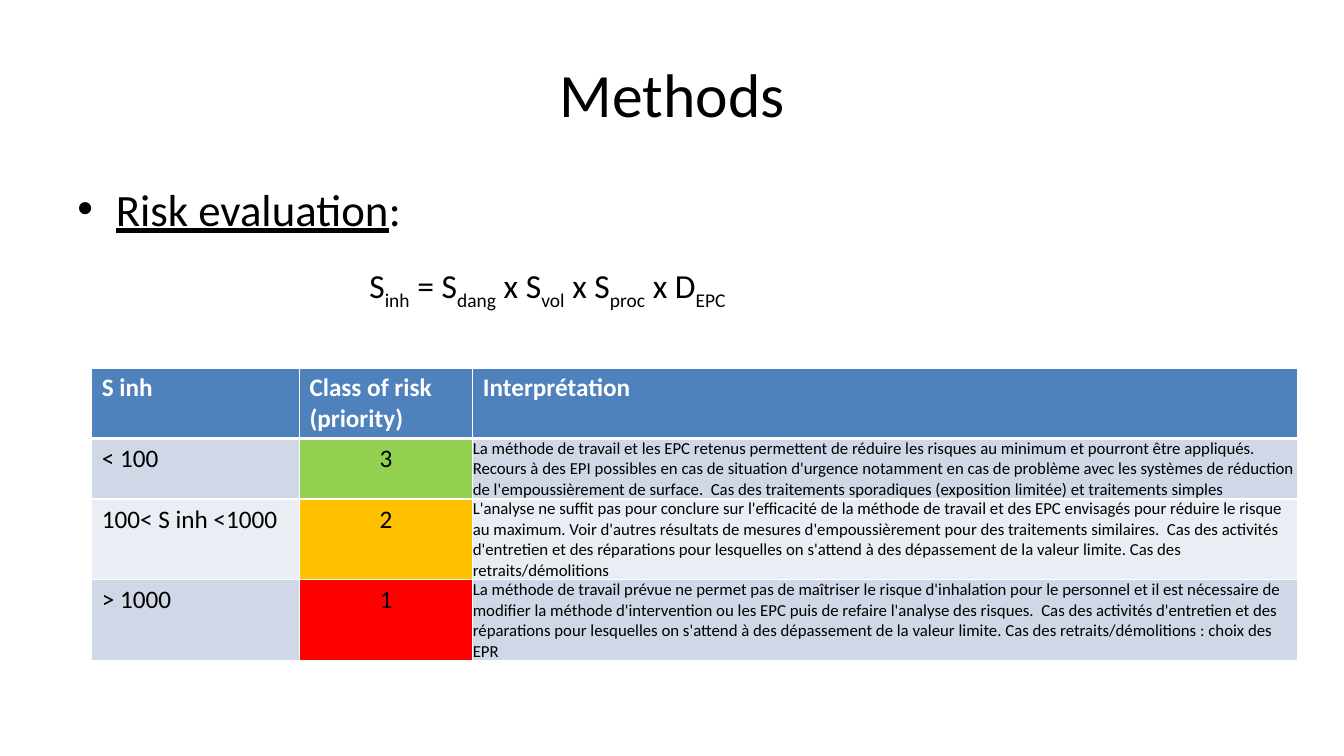
from lxml.etree import SubElement
from pptx import Presentation
from pptx.dml.color import RGBColor
from pptx.enum.text import MSO_ANCHOR, PP_ALIGN
from pptx.oxml.ns import qn
from pptx.util import Inches, Pt

FONT = "Calibri"
BLACK = RGBColor(0x00, 0x00, 0x00)
WHITE = RGBColor(0xFF, 0xFF, 0xFF)
BLUE = RGBColor(0x4F, 0x81, 0xBD)
BAND_DARK = RGBColor(0xD0, 0xD8, 0xE8)
BAND_LIGHT = RGBColor(0xE9, 0xED, 0xF4)
GREEN = RGBColor(0x92, 0xD0, 0x50)
AMBER = RGBColor(0xFF, 0xC0, 0x00)
RED = RGBColor(0xFF, 0x00, 0x00)

HEADERS = ["S inh", "Class of risk (priority)", "Interprétation"]
RISKS = [
    ("< 100", "3", GREEN,
     "La méthode de travail et les EPC retenus permettent de réduire les risques au minimum "
     "et pourront être appliqués. Recours à des EPI possibles en cas de situation d'urgence "
     "notamment en cas de problème avec les systèmes de réduction de l'empoussièrement de "
     "surface.  Cas des traitements sporadiques (exposition limitée) et traitements simples"),
    ("100< S inh <1000", "2", AMBER,
     "L'analyse ne suffit pas pour conclure sur l'efficacité de la méthode de travail et des "
     "EPC envisagés pour réduire le risque au maximum. Voir d'autres résultats de mesures "
     "d'empoussièrement pour des traitements similaires.  Cas des activités d'entretien et "
     "des réparations pour lesquelles on s'attend à des dépassement de la valeur limite. "
     "Cas des retraits/démolitions"),
    ("> 1000", "1", RED,
     "La méthode de travail prévue ne permet pas de maîtriser le risque d'inhalation pour le "
     "personnel et il est nécessaire de modifier la méthode d'intervention ou les EPC puis de "
     "refaire l'analyse des risques.  Cas des activités d'entretien et des réparations pour "
     "lesquelles on s'attend à des dépassement de la valeur limite. Cas des "
     "retraits/démolitions : choix des EPR"),
]
FORMULA = [("S", "inh"), (" = S", "dang"), (" x S", "vol"), (" x S", "proc"), (" x D", "EPC")]
COL_WIDTHS = [2.06, 1.72, 8.18]
ROW_HEIGHTS = [0.7, 0.6, 0.8, 0.8]


def add_run(p, text, size, color=BLACK, bold=False, underline=False, subscript=False):
    r = p.add_run()
    r.text = text
    r.font.name, r.font.size = FONT, Pt(size)
    r.font.bold, r.font.underline = bold, underline
    r.font.color.rgb = color
    if subscript:
        r.font._element.set("baseline", "-25000")


def add_box(s, left, top, width, height, anchor=MSO_ANCHOR.TOP):
    """Add a wrapping text box and return its first paragraph."""
    tf = s.shapes.add_textbox(*map(Inches, (left, top, width, height))).text_frame
    tf.word_wrap = True
    tf.vertical_anchor = anchor
    return tf.paragraphs[0]


def add_title(s, *box):
    p = add_box(s, *box, anchor=MSO_ANCHOR.MIDDLE)
    p.alignment = PP_ALIGN.CENTER
    add_run(p, "Methods", 44)


def add_body(s, *box):
    p = add_box(s, *box)
    pPr = p._p.get_or_add_pPr()
    pPr.set("marL", str(Inches(0.38)))
    pPr.set("indent", str(-Inches(0.38)))
    SubElement(pPr, qn("a:buFont"), typeface="Arial")
    SubElement(pPr, qn("a:buChar"), char="•")
    add_run(p, "Risk evaluation", 32, underline=True)
    add_run(p, ":", 32)


def add_formula(s, *box):
    p = add_box(s, *box)
    p.alignment = PP_ALIGN.CENTER
    p.line_spacing = 1.07
    p.space_after = Pt(8)
    p._p.get_or_add_pPr().set("marL", str(Inches(0.74)))
    for symbol, index in FORMULA:
        add_run(p, symbol, 24)
        add_run(p, index, 24, subscript=True)


def set_borders(cell, top=1, bottom=1):
    tcPr = cell._tc.get_or_add_tcPr()
    for side, width in (("L", 1), ("R", 1), ("T", top), ("B", bottom)):
        ln = SubElement(tcPr, qn(f"a:ln{side}"), w=str(Pt(width)))
        SubElement(SubElement(ln, qn("a:solidFill")), qn("a:srgbClr"), val=str(WHITE))


def fill_cell(cell, text, fill, size=18, align=PP_ALIGN.LEFT, top=1, bottom=1, **font):
    set_borders(cell, top, bottom)
    cell.fill.solid()
    cell.fill.fore_color.rgb = fill
    p = cell.text_frame.paragraphs[0]
    p.alignment = align
    add_run(p, text, size, **font)


def add_risk_table(s, left, top):
    size = sum(COL_WIDTHS), sum(ROW_HEIGHTS)
    table = s.shapes.add_table(len(ROW_HEIGHTS), len(COL_WIDTHS),
                               *map(Inches, (left, top, *size))).table
    for col, width in zip(table.columns, COL_WIDTHS):
        col.width = Inches(width)
    for row, height in zip(table.rows, ROW_HEIGHTS):
        row.height = Inches(height)
    for c, header in enumerate(HEADERS):
        fill_cell(table.cell(0, c), header, BLUE, bottom=3, color=WHITE, bold=True)
    for i, (score, priority, color, reading) in enumerate(RISKS, 1):
        band = BAND_DARK if i % 2 else BAND_LIGHT
        edge = 3 if i == 1 else 1
        fill_cell(table.cell(i, 0), score, band, top=edge)
        fill_cell(table.cell(i, 1), priority, color, align=PP_ALIGN.CENTER, top=edge)
        cell = table.cell(i, 2)
        fill_cell(cell, reading, band, size=12, top=edge)
        cell.margin_left = cell.margin_right = cell.margin_top = cell.margin_bottom = 0
        cell.vertical_anchor = MSO_ANCHOR.BOTTOM


def main():
    prs = Presentation()
    prs.slide_width, prs.slide_height = Inches(13.33), Inches(7.5)
    s = prs.slides.add_slide(prs.slide_layouts[6])
    add_title(s, 0.67, 0.3, 12, 1.25)
    add_body(s, 0.67, 1.75, 12, 4.95)
    add_formula(s, 2.56, 2.55, 5, 0.51)
    add_risk_table(s, 0.91, 3.65)
    prs.save("out.pptx")


if __name__ == "__main__":
    main()
